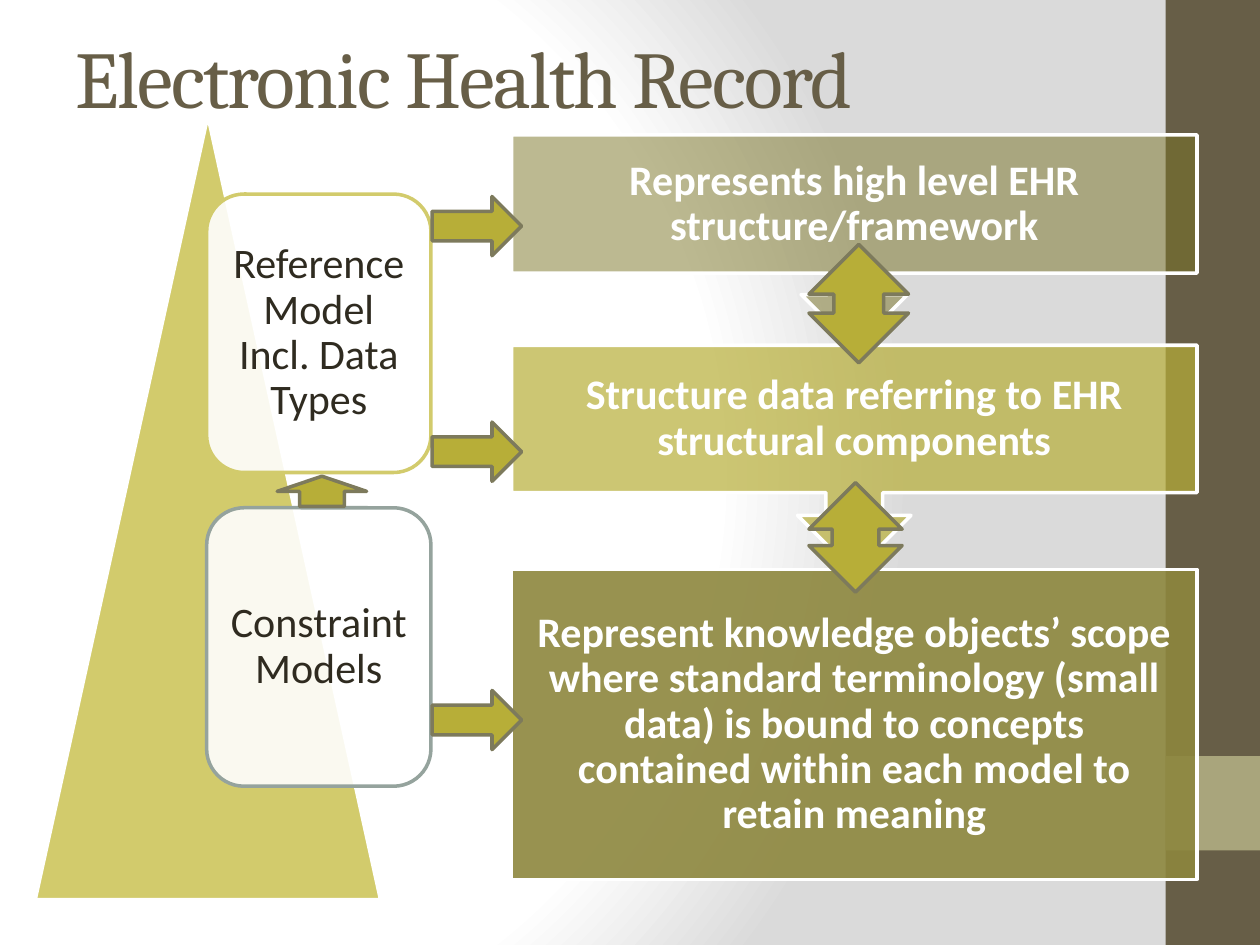
from lxml import etree
from pptx import Presentation
from pptx.dml.color import RGBColor
from pptx.enum import shapes, text
from pptx.oxml import parse_xml
from pptx.oxml.ns import nsdecls, qn
from pptx.util import Pt

PX = 9144  # 100 px to the inch
COLORS = {
    "white": "FFFFFF", "grey": "DADADA", "brown": "675E47", "sand": "A9A57C",
    "ink": "2F2B20", "olive": "B7AE38", "deep_olive": "7A7425",
    "dark_olive": "8D873E", "lime": "D2CB6C", "sage": "95A39D",
    "arrow_edge": "7D7A5C",
}
SHAPE = shapes.MSO_SHAPE


def color(name):
    return RGBColor.from_string(COLORS[name])


def emu(*lengths):
    return [length * PX for length in lengths]


def add_part(slide, kind, box, fill, line=None, opacity=100):
    part = slide.shapes.add_shape(kind, *emu(*box))
    part.shadow.inherit = False
    part.fill.solid()
    part.fill.fore_color.rgb = color(fill)
    if opacity < 100:
        tint = part.fill._xPr.find(qn("a:solidFill"))[0]
        etree.SubElement(tint, qn("a:alpha"), val=str(opacity * 1000))
    if line:
        part.line.color.rgb = color(line)
        part.line.width = Pt(2)
    else:
        part.line.fill.background()
    return part


def write(part, words, ink, inset, bold=False):
    frame = part.text_frame
    frame.text = words
    frame.word_wrap = True
    frame.vertical_anchor = text.MSO_ANCHOR.MIDDLE
    frame.margin_left = frame.margin_right = inset * PX
    frame.margin_top = frame.margin_bottom = inset * PX
    paragraph = frame.paragraphs[0]
    paragraph.alignment = text.PP_ALIGN.CENTER
    paragraph.line_spacing = 0.9
    font = paragraph.runs[0].font
    font.name, font.size, font.bold = "Calibri", Pt(24), bold
    font.color.rgb = color(ink)


def add_backdrop(slide):
    # Radial gradient, then the side band with its accent square
    slide.background.fill.gradient()
    properties = slide.background._cSld.find(qn("p:bg")).find(qn("p:bgPr"))
    stops = "".join(
        f'<a:gs pos="{pos * 1000}"><a:srgbClr val="{COLORS[name]}"/></a:gs>'
        for pos, name in ((0, "white"), (75, "white"), (100, "grey")))
    properties.replace(properties.find(qn("a:gradFill")), parse_xml(
        f'<a:gradFill {nsdecls("a")} rotWithShape="1"><a:gsLst>{stops}</a:gsLst>'
        '<a:path path="circle"><a:fillToRect l="20000" t="50000" '
        'r="100000" b="50000"/></a:path></a:gradFill>'))
    add_part(slide, SHAPE.RECTANGLE, (925, 0, 75, 750), "brown")
    add_part(slide, SHAPE.RECTANGLE, (925, 600, 75, 75), "sand")


def add_title(slide, box, words):
    title = slide.shapes.title
    title.left, title.top, title.width, title.height = emu(*box)
    frame = title.text_frame
    frame.text = words
    frame.auto_size = text.MSO_AUTO_SIZE.NONE
    frame.vertical_anchor = text.MSO_ANCHOR.MIDDLE
    frame.paragraphs[0].alignment = text.PP_ALIGN.LEFT
    run = frame.paragraphs[0].runs[0]
    run.font.name, run.font.size = "Cambria", Pt(46)
    run.font.color.rgb = color("brown")
    run._r.get_or_add_rPr().set("spc", "-100")


def add_descriptions(slide, left, top, width):
    # Bottom panel first, so that each callout points over the one below
    knowledge = add_part(slide, SHAPE.RECTANGLE, (left, top + 345, width, 246),
                         "dark_olive", "white", 90)
    write(knowledge, "Represent knowledge objects’ scope where standard "
          "terminology (small data) is bound to concepts contained within "
          "each model to retain meaning", "white", 19, True)
    callouts = (
        (167, 180, 117, "olive", 70,
         "Structure data referring to EHR structural components"),
        (0, 169, 110, "deep_olive", 50,
         "Represents high level EHR structure/framework"),
    )
    for offset, height, label_height, fill, opacity, words in callouts:
        callout = add_part(slide, SHAPE.UP_ARROW_CALLOUT,
                           (left, top + offset, width, height),
                           fill, "white", opacity)
        callout.rotation = 180
        # Separate label, since the callout is turned upside down
        label = slide.shapes.add_textbox(
            *emu(left, top + offset, width, label_height))
        write(label, words, "white", 19, True)


def add_models(slide, left, top, width, height):
    # Pyramid with the two model cards on its right half
    add_part(slide, SHAPE.ISOSCELES_TRIANGLE, (left, top, width, height),
             "lime", "white")
    cards = (("Reference Model Incl. Data Types", "lime"),
             ("Constraint Models", "sage"))
    for row, (words, edge) in enumerate(cards):
        card = add_part(slide, SHAPE.ROUNDED_RECTANGLE,
                        (left + 136, top + 62 + 249 * row, 178, 221),
                        "white", edge, 90)
        write(card, words, "ink", 10)


def add_arrows(slide):
    arrows = [(SHAPE.RIGHT_ARROW, (343, top, 71, 47)) for top in (156, 335, 548)]
    arrows += [
        (SHAPE.UP_ARROW, (220, 378, 71, 24)),
        (SHAPE.UP_DOWN_ARROW, (642, 194, 79, 94)),
        (SHAPE.UP_DOWN_ARROW, (642, 383, 74, 87)),
    ]
    for kind, box in arrows:
        add_part(slide, kind, box, "olive", "arrow_edge")


def main():
    deck = Presentation()
    deck.slide_width, deck.slide_height = emu(1000, 750)
    slide = deck.slides.add_slide(deck.slide_layouts[5])  # Title Only
    add_backdrop(slide)
    add_title(slide, (50, 30, 900, 61), "Electronic Health Record")
    add_descriptions(slide, 406, 107, 544)
    add_models(slide, 28, 92, 274, 622)
    add_arrows(slide)
    deck.save("out.pptx")


if __name__ == "__main__":
    main()
